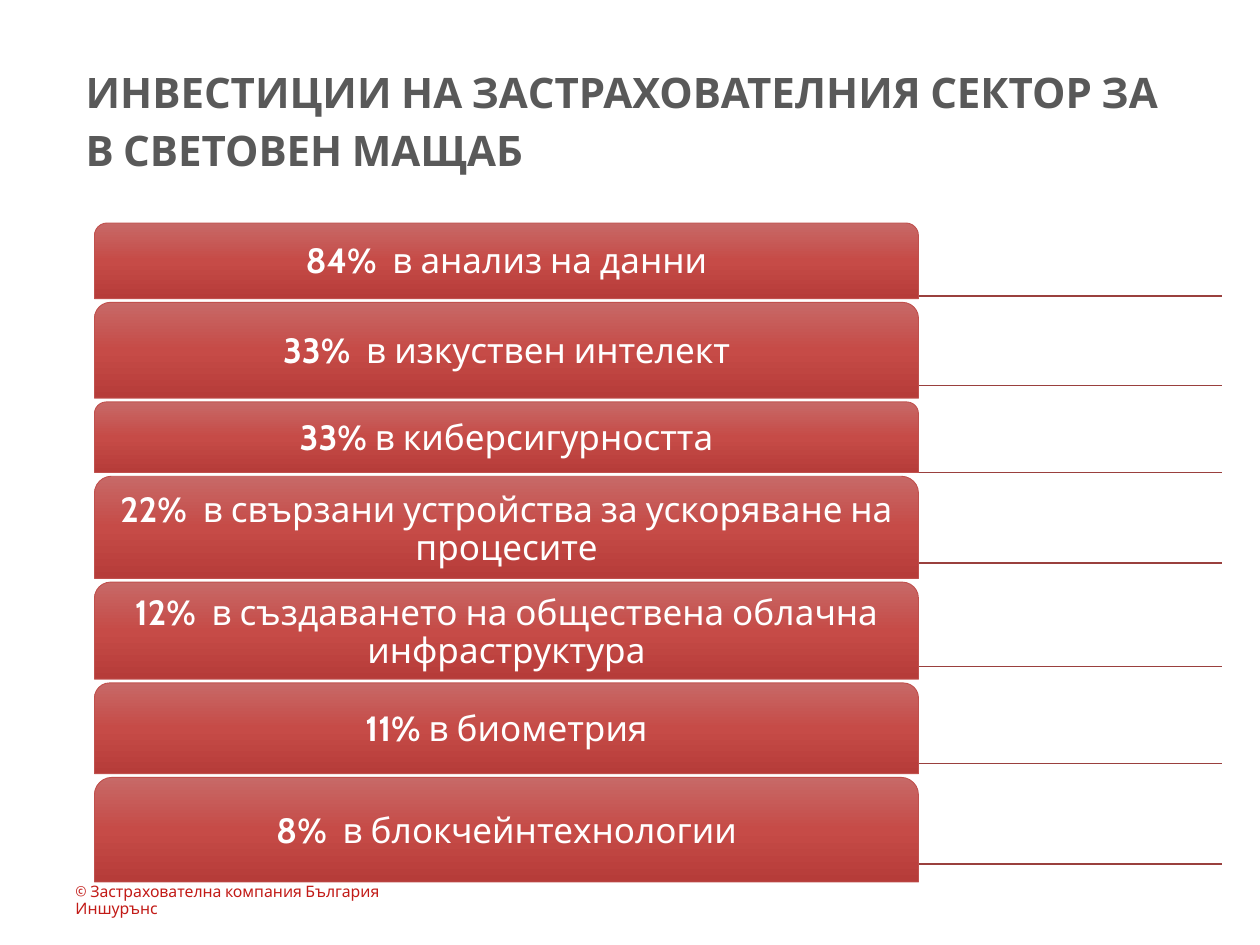
import copy
import pptx
import pptx.dml.color
import pptx.enum.shapes
import pptx.enum.text
import pptx.oxml.ns
import pptx.util

Inch = pptx.util.Inches
Pt = pptx.util.Pt
Align = pptx.enum.text.PP_ALIGN
Anchor = pptx.enum.text.MSO_ANCHOR
qn = pptx.oxml.ns.qn

FONT = "Cabin"
WIDE, HIGH = 10, 7.5
LEFT, TOP, SPAN, GAP = 0.75, 1.77, 6.54, 0.03
RULE_FROM, RULE_TO = 3.17, 9.7
SHADES = [(0, "C76967"), (50, "C64B47"), (100, "B63C39")]

# Share, area, bar height, height of the rule on the slide
ROWS = [
    ("84%  ", "в анализ на данни", 0.6, 2.35),
    ("33%  ", "в изкуствен интелект", 0.76, 3.06),
    ("33% ", "в киберсигурността", 0.56, 3.75),
    ("22%  ", "в свързани устройства за ускоряване на процесите", 0.81, 4.47),
    ("12%  ", "в създаването на обществена облачна инфраструктура", 0.77, 5.29),
    ("11%", " в биометрия", 0.72, 6.06),
    ("8%  ", "в блокчейнтехнологии", 0.83, 6.86),
]


def tint(code):
    return pptx.dml.color.RGBColor.from_string(code)


def style(run, size, code, bold=False):
    font = run.font
    font.name, font.size, font.bold = FONT, Pt(size), bold
    font.color.rgb = tint(code)


def place(shape, left, top, width, height):
    shape.left, shape.top = Inch(left), Inch(top)
    shape.width, shape.height = Inch(width), Inch(height)


def add_title(slide, text):
    title = slide.shapes.title
    place(title, 0.58, 0.42, 8.83, 1.03)
    frame = title.text_frame
    frame.text = text
    frame.word_wrap = True
    frame.auto_size = pptx.enum.text.MSO_AUTO_SIZE.NONE
    frame.vertical_anchor = Anchor.TOP
    para = frame.paragraphs[0]
    para.alignment = Align.LEFT
    para.line_spacing, para.space_after = 1.15, Pt(5.3)
    para.space_before = Pt(0)
    style(para.runs[0], 24, "595959", True)


def add_note(slide, text):
    box = slide.shapes.add_textbox(Inch(0.5), Inch(6.95), Inch(2.92), Inch(0.4))
    frame = box.text_frame
    frame.text = text
    frame.word_wrap = True
    frame.vertical_anchor = Anchor.MIDDLE
    frame.margin_top = frame.margin_bottom = Inch(0.04)
    frame.paragraphs[0].line_spacing = 0.93
    style(frame.paragraphs[0].runs[0], 9, "C21B17")


def add_rule(slide, y):
    kind = pptx.enum.shapes.MSO_CONNECTOR.STRAIGHT
    rule = slide.shapes.add_connector(
        kind, Inch(RULE_FROM), Inch(y), Inch(RULE_TO), Inch(y))
    rule.line.color.rgb = tint("9A403E")
    rule.line.width = Pt(1)
    props = rule._element.spPr
    props.append(props.makeelement(qn("a:effectLst"), {}))


def shade(shape):
    fill = shape.fill
    fill.gradient()
    fill.gradient_angle = 270
    # A new gradient has two stops, so the middle one is added
    stops = shape._element.spPr.find(".//" + qn("a:gsLst"))
    stops.insert(1, copy.deepcopy(stops[0]))
    for stop, (place_at, code) in zip(fill.gradient_stops, SHADES):
        stop.position = place_at / 100
        stop.color.rgb = tint(code)


def add_bar(slide, top, height, share, area):
    kind = pptx.enum.shapes.MSO_SHAPE.ROUND_2_SAME_RECTANGLE
    bar = slide.shapes.add_shape(
        kind, Inch(LEFT), Inch(top), Inch(SPAN), Inch(height))
    bar.shadow.inherit = False
    shade(bar)
    bar.line.color.rgb = tint("C0504D")
    bar.line.width = Pt(0.5)
    frame = bar.text_frame
    frame.word_wrap = True
    frame.vertical_anchor = Anchor.MIDDLE
    frame.margin_left = frame.margin_right = Inch(0.04)
    frame.margin_top = frame.margin_bottom = Inch(0.04)
    para = frame.paragraphs[0]
    para.alignment = Align.CENTER
    para.line_spacing = 0.9
    for text, bold in ((share, True), (area, False)):
        run = para.add_run()
        run.text = text
        style(run, 20, "FFFFFF", bold)


def main():
    deck = pptx.Presentation()
    deck.slide_width, deck.slide_height = Inch(WIDE), Inch(HIGH)
    slide = deck.slides.add_slide(deck.slide_layouts[5])

    add_title(slide, "ИНВЕСТИЦИИ НА ЗАСТРАХОВАТЕЛНИЯ СЕКТОР ЗА В СВЕТОВЕН МАЩАБ")
    add_note(slide, "© Застрахователна компания България Иншурънс")

    # Rules lie behind the bars
    for row in reversed(ROWS):
        add_rule(slide, row[3])

    # Bars stack with an equal gap
    top = TOP
    for share, area, height, _ in ROWS:
        add_bar(slide, top, height, share, area)
        top += height + GAP

    deck.save("out.pptx")


if __name__ == "__main__":
    main()
